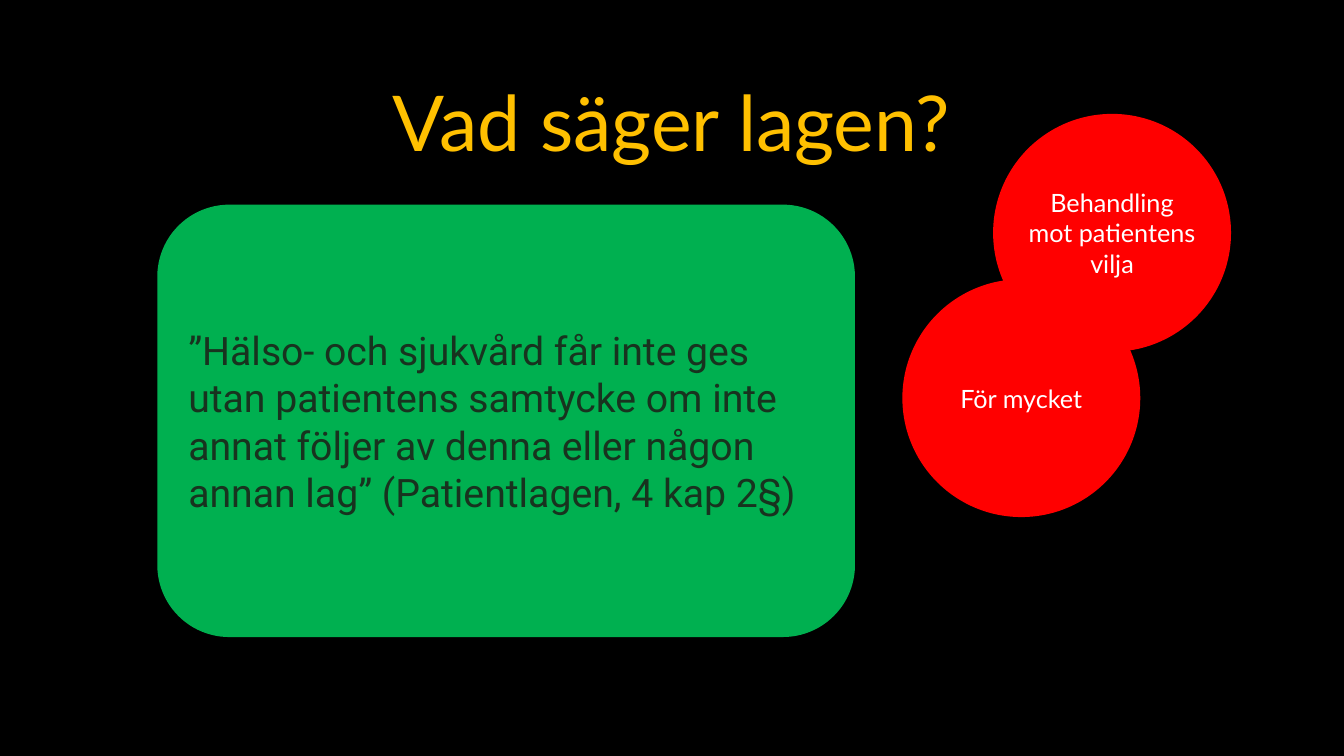
from dataclasses import dataclass

from pptx import Presentation
from pptx.dml.color import RGBColor
from pptx.enum.shapes import MSO_SHAPE
from pptx.enum.text import MSO_ANCHOR, PP_ALIGN
from pptx.util import Inches, Pt

OVAL, ROUNDED = MSO_SHAPE.OVAL, MSO_SHAPE.ROUNDED_RECTANGLE
MIDDLE = MSO_ANCHOR.MIDDLE
LEFT, CENTER = PP_ALIGN.LEFT, PP_ALIGN.CENTER


@dataclass(frozen=True)
class Theme:
    """Colours, fonts and type sizes of the slide."""
    background: str = "000000"
    title: str = "FFC000"
    quote_fill: str = "00B050"
    quote_text: str = "18331F"
    circle_fill: str = "FF0000"
    circle_text: str = "FFFFFF"
    main_font: str = "Lato"
    quote_font: str = "Roboto"
    title_size: int = 55
    quote_size: int = 28
    circle_size: int = 18


THEME = Theme()
CIRCLE_SIZE = 2.36


def rgb(value):
    """Turn a hex string into a colour."""
    return RGBColor.from_string(value)


def write(sp, text, font, size, color, align):
    """Write one vertically centred paragraph into a shape."""
    tf = sp.text_frame
    tf.word_wrap = True
    tf.vertical_anchor = MIDDLE
    p = tf.paragraphs[0]
    p.alignment = align
    r = p.add_run()
    r.text = text
    r.font.name = font
    r.font.size = Pt(size)
    r.font.color.rgb = rgb(color)


def add_filled(slide, kind, box, fill):
    """Add a flat shape without an outline."""
    sp = slide.shapes.add_shape(kind, *map(Inches, box))
    sp.shadow.inherit = False
    sp.fill.solid()
    sp.fill.fore_color.rgb = rgb(fill)
    sp.line.fill.background()
    return sp


def add_title(slide, box, text):
    """Add the centred slide title."""
    sp = slide.shapes.add_textbox(*map(Inches, box))
    write(sp, text, THEME.main_font, THEME.title_size, THEME.title, CENTER)


def add_quote(slide, box, text):
    """Add the rounded panel with the quoted law."""
    sp = add_filled(slide, ROUNDED, box, THEME.quote_fill)
    write(sp, text, THEME.quote_font, THEME.quote_size, THEME.quote_text, LEFT)


def add_circle(slide, left, top, text):
    """Add a labelled circle."""
    box = (left, top, CIRCLE_SIZE, CIRCLE_SIZE)
    sp = add_filled(slide, OVAL, box, THEME.circle_fill)
    sp.text_frame.margin_left = sp.text_frame.margin_right = 0
    write(sp, text, THEME.main_font, THEME.circle_size, THEME.circle_text, CENTER)


def build_law_slide(prs):
    """Build the slide about what the law says."""
    slide = prs.slides.add_slide(prs.slide_layouts[6])
    slide.background.fill.solid()
    slide.background.fill.fore_color.rgb = rgb(THEME.background)
    add_circle(slide, 9.85, 1.13, "Behandling mot patientens vilja")
    add_title(slide, (1, 0.67, 11.32, 1.06), "Vad säger lagen?")
    add_quote(slide, (1.56, 2.03, 6.92, 4.29),
              "”Hälso- och sjukvård får inte ges utan patientens samtycke "
              "om inte annat följer av denna eller någon annan lag” "
              "(Patientlagen, 4 kap 2§)")
    add_circle(slide, 8.95, 2.77, "För mycket")


def main():
    """Create and save the presentation."""
    prs = Presentation()
    prs.slide_width, prs.slide_height = Inches(13.33), Inches(7.5)
    build_law_slide(prs)
    prs.save("out.pptx")


if __name__ == "__main__":
    main()
